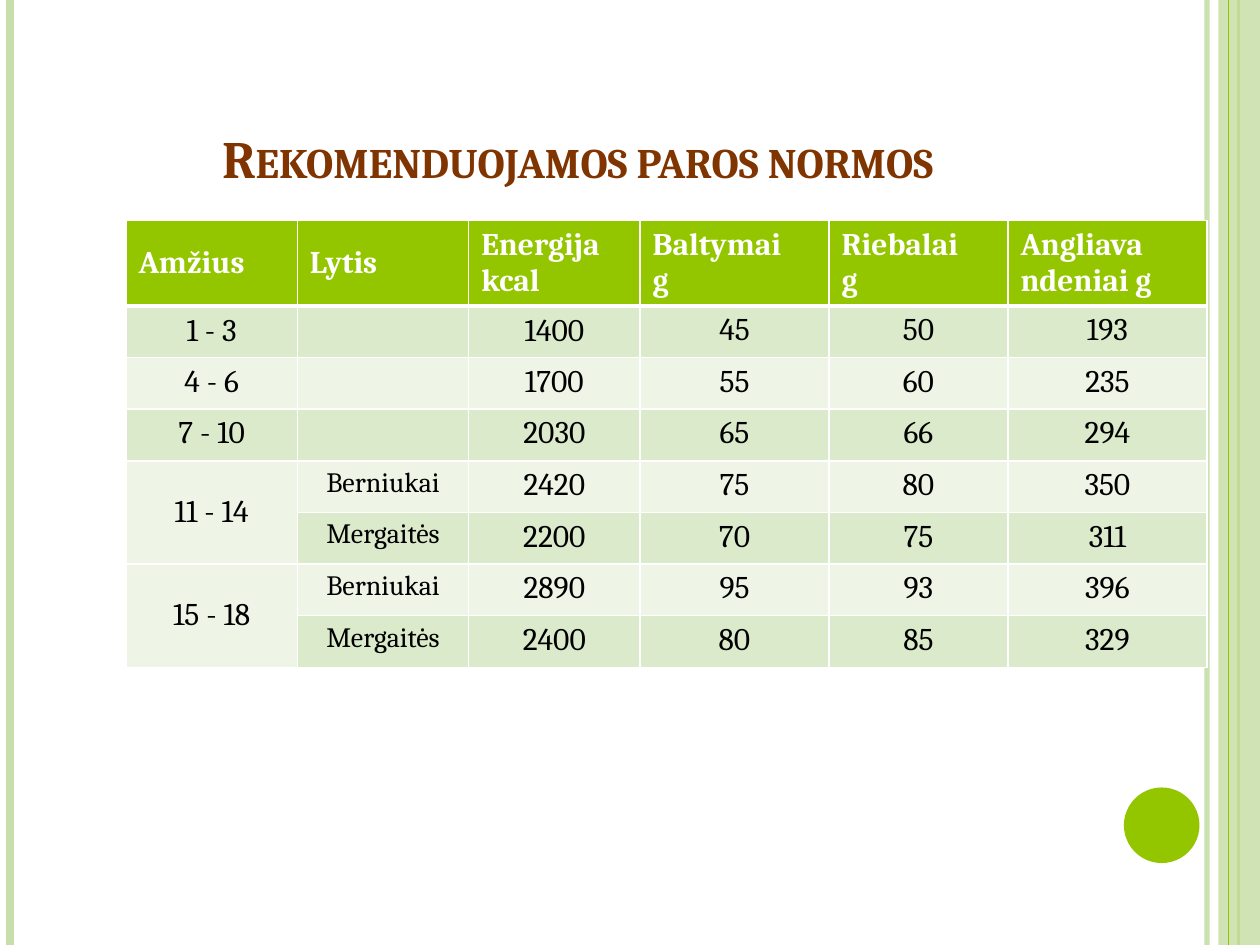
from lxml import etree
from pptx import Presentation
from pptx.dml.color import RGBColor
from pptx.enum.shapes import MSO_CONNECTOR, MSO_SHAPE
from pptx.enum.text import MSO_ANCHOR, MSO_AUTO_SIZE, PP_ALIGN
from pptx.oxml.ns import qn
from pptx.util import Inches, Pt

STRAIGHT = MSO_CONNECTOR.STRAIGHT
RECTANGLE, OVAL = MSO_SHAPE.RECTANGLE, MSO_SHAPE.OVAL
TOP, MIDDLE, BOTTOM = MSO_ANCHOR.TOP, MSO_ANCHOR.MIDDLE, MSO_ANCHOR.BOTTOM
NO_AUTOFIT = MSO_AUTO_SIZE.NONE
LEFT, CENTER = PP_ALIGN.LEFT, PP_ALIGN.CENTER

GREEN = RGBColor(0x94, 0xC6, 0x00)
PALE_GREEN = RGBColor(0xC8, 0xDF, 0xAB)
DARK_BAND = RGBColor(0xDC, 0xEA, 0xCC)
LIGHT_BAND = RGBColor(0xEE, 0xF5, 0xE7)
BROWN = RGBColor(0x80, 0x34, 0x00)
WHITE = RGBColor(0xFF, 0xFF, 0xFF)
BLACK = RGBColor(0x00, 0x00, 0x00)

FONT = "Cambria"
SLIDE_WIDTH, SLIDE_HEIGHT = 10, 7.5

COLUMN_WIDTHS = [1.36, 1.36, 1.36, 1.5, 1.42, 1.58]
HEADER_HEIGHT, ROW_HEIGHT = 0.67, 0.41
HEADERS = ["Amžius", "Lytis", "Energija kcal", "Baltymai\ng", "Riebalai\ng", "Angliava\nndeniai g"]
NORMS = [
    ["1 - 3", "", "1400", "45", "50", "193"],
    ["4 - 6", "", "1700", "55", "60", "235"],
    ["7 - 10", "", "2030", "65", "66", "294"],
    ["11 - 14", "Berniukai", "2420", "75", "80", "350"],
    ["", "Mergaitės", "2200", "70", "75", "311"],
    ["15 - 18", "Berniukai", "2890", "95", "93", "396"],
    ["", "Mergaitės", "2400", "80", "85", "329"],
]
SHARED_AGE_ROWS = [4, 6]
MIDDLE_CELLS = [(1, 0), (1, 2), (4, 0), (6, 0)]


def write_text(frame, text, size=18, color=BLACK, bold=False, align=LEFT, small_caps=False):
    for index, line in enumerate(text.split("\n")):
        paragraph = frame.paragraphs[0] if index == 0 else frame.add_paragraph()
        paragraph.alignment = align
        run = paragraph.add_run()
        run.text = line
        run.font.name = FONT
        run.font.size = Pt(size)
        run.font.bold = bold
        run.font.color.rgb = color
        if small_caps:
            run.font._element.set("cap", "small")


def set_alpha(fill_parent, percent):
    color = fill_parent.find(".//" + qn("a:srgbClr"))
    etree.SubElement(color, qn("a:alpha"), val=str(percent * 1000))


def add_stripe(slide, x, width, color, alpha=None):
    stripe = slide.shapes.add_connector(STRAIGHT, Inches(x), 0, Inches(x), Inches(SLIDE_HEIGHT))
    stripe.line.width = Pt(width)
    stripe.line.color.rgb = color
    properties = stripe._element.spPr
    if alpha:
        set_alpha(properties, alpha)
    etree.SubElement(properties, qn("a:effectLst"))


def add_filled(slide, kind, left, top, width, height, color, alpha=None):
    shape = slide.shapes.add_shape(kind, Inches(left), Inches(top), Inches(width), Inches(height))
    shape.shadow.inherit = False
    shape.fill.solid()
    shape.fill.fore_color.rgb = color
    shape.line.fill.background()
    if alpha:
        set_alpha(shape._element.spPr, alpha)


def add_decoration(slide):
    add_stripe(slide, 9.58, 3, PALE_GREEN, alpha=93)
    add_stripe(slide, 0.08, 4.5, PALE_GREEN)
    add_stripe(slide, 9.83, 1.5, GREEN)
    add_filled(slide, RECTANGLE, 9.67, 0, 0.33, SLIDE_HEIGHT, PALE_GREEN, alpha=87)
    add_stripe(slide, 9.75, 0.75, GREEN)
    add_filled(slide, OVAL, 8.92, 6.25, 0.6, 0.6, GREEN)


def add_title(slide, text):
    title = slide.shapes.title
    title.left, title.top = Inches(0.5), Inches(0.3)
    title.width, title.height = Inches(8.17), Inches(1.25)
    frame = title.text_frame
    frame.word_wrap = True
    frame.auto_size = NO_AUTOFIT
    frame.vertical_anchor = BOTTOM
    write_text(frame, text, size=30, color=BROWN, bold=True, align=CENTER, small_caps=True)


def style_cell(cell, fill, top_border=1, bottom_border=1):
    properties = cell._tc.get_or_add_tcPr()
    widths = {"a:lnL": 1, "a:lnR": 1, "a:lnT": top_border, "a:lnB": bottom_border}
    for tag, width in widths.items():
        border = etree.SubElement(properties, qn(tag), w=str(Pt(width)))
        solid = etree.SubElement(border, qn("a:solidFill"))
        etree.SubElement(solid, qn("a:srgbClr"), val=str(WHITE))
    cell.fill.solid()
    cell.fill.fore_color.rgb = fill


def add_norms_table(slide):
    height = HEADER_HEIGHT + ROW_HEIGHT * len(NORMS)
    table = slide.shapes.add_table(
        len(NORMS) + 1, len(HEADERS), Inches(1), Inches(1.75),
        Inches(sum(COLUMN_WIDTHS)), Inches(height)).table
    for column, width in zip(table.columns, COLUMN_WIDTHS):
        column.width = Inches(width)
    for index, row in enumerate(table.rows):
        row.height = Inches(ROW_HEIGHT if index else HEADER_HEIGHT)
    for row in SHARED_AGE_ROWS:
        table.cell(row, 0).merge(table.cell(row + 1, 0))

    for column, header in enumerate(HEADERS):
        cell = table.cell(0, column)
        style_cell(cell, GREEN, bottom_border=3)
        cell.vertical_anchor = MIDDLE
        write_text(cell.text_frame, header, color=WHITE, bold=True)

    for row, norms in enumerate(NORMS, start=1):
        for column, value in enumerate(norms):
            cell = table.cell(row, column)
            style_cell(cell, DARK_BAND if row % 2 else LIGHT_BAND, top_border=3 if row == 1 else 1)
            cell.vertical_anchor = MIDDLE if (row, column) in MIDDLE_CELLS else TOP
            if value:
                write_text(cell.text_frame, value, size=16 if column == 1 else 18, align=CENTER)


def main():
    presentation = Presentation()
    presentation.slide_width = Inches(SLIDE_WIDTH)
    presentation.slide_height = Inches(SLIDE_HEIGHT)
    slide = presentation.slides.add_slide(presentation.slide_layouts[5])
    add_decoration(slide)
    add_title(slide, "Rekomenduojamos paros normos")
    add_norms_table(slide)
    presentation.save("out.pptx")


if __name__ == "__main__":
    main()
